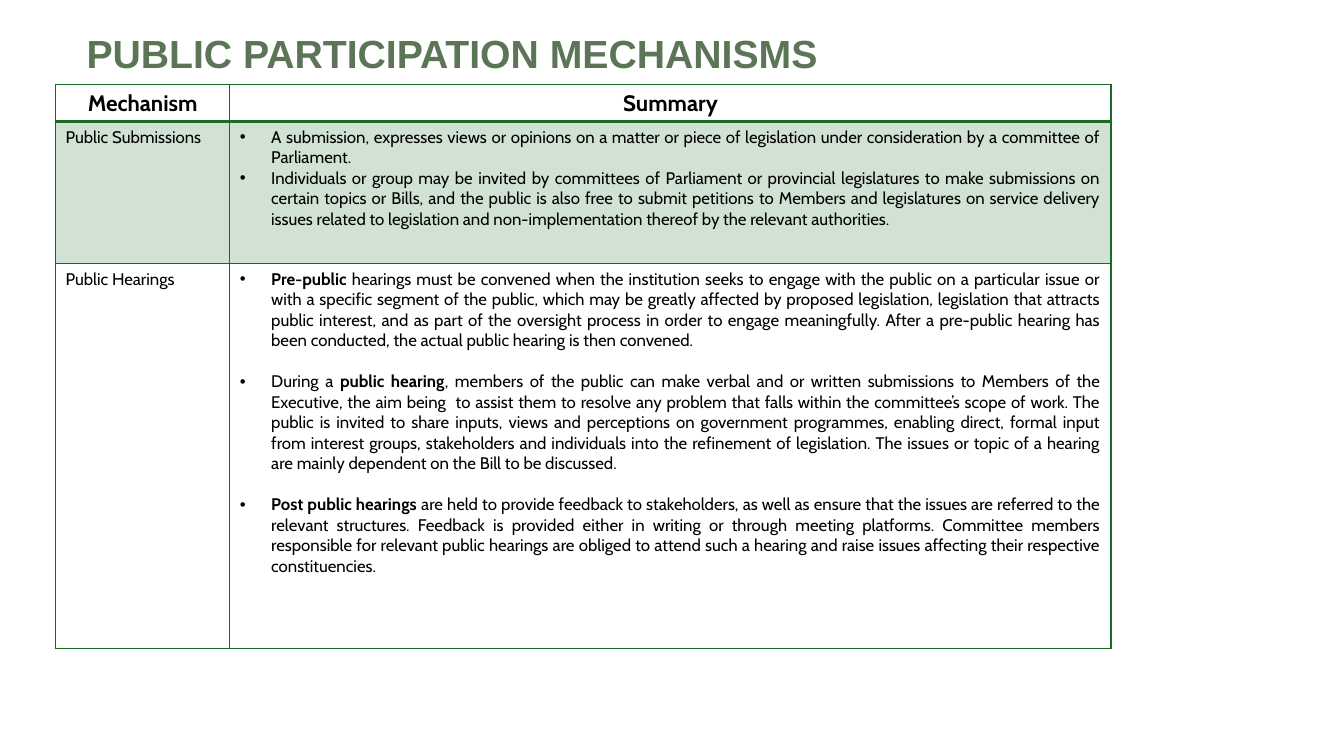
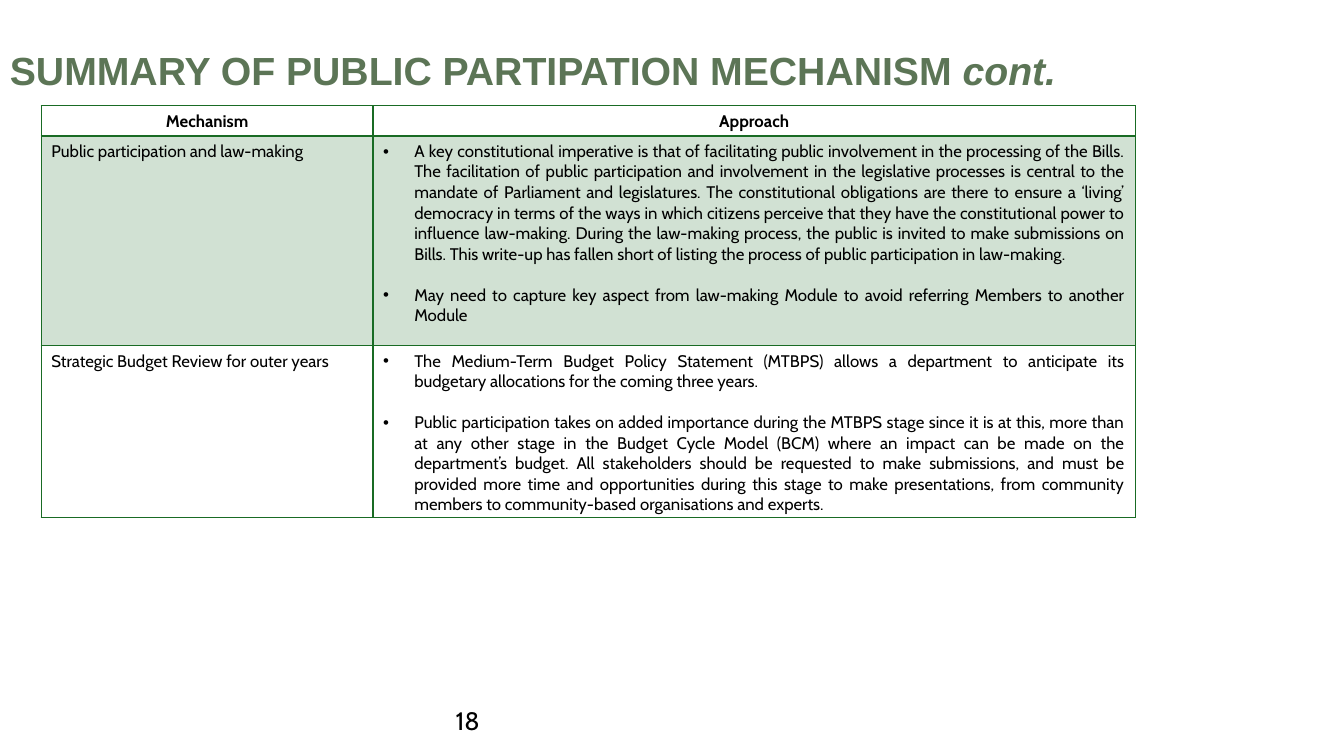
from pptx import Presentation
from pptx.dml.color import RGBColor
from pptx.enum.text import MSO_ANCHOR as Anchor, PP_ALIGN as Align
from pptx.oxml.ns import qn
from pptx.util import Pt
from lxml.etree import SubElement as Sub

# Shared look
PX = 9144  # 100 px to the inch
GREEN, SAGE, BLACK = "196B24", "5C7556", "000000"
HEAD, BODY = "Arial", "Cabin"
TINT = 20  # percent of green in a shaded row
STEP = 31  # hanging indent of a bullet
GAP = 14.6  # one blank line of body text, in points


def color(code):
    return RGBColor.from_string(code)


def add_run(par, text, size, font=BODY, hue=BLACK, bold=False, slant=False):
    run = par.add_run()
    run.text = text
    face = run.font
    face.name, face.size = font, Pt(size)
    face.bold, face.italic = bold, slant
    face.color.rgb = color(hue)


def add_box(slide, left, top, width, height, anchor=Anchor.TOP):
    box = slide.shapes.add_textbox(*(n * PX for n in (left, top, width, height)))
    frame = box.text_frame
    frame.word_wrap = True
    frame.vertical_anchor = anchor
    return frame.paragraphs[0]


def add_title(slide, place, text, tail=""):
    par = add_box(slide, *place, anchor=Anchor.MIDDLE)
    par.line_spacing = 0.9
    add_run(par, text, 28, HEAD, SAGE, bold=True)
    if tail:
        add_run(par, tail, 28, HEAD, SAGE, bold=True, slant=True)


def add_fill(node, code, alpha=100):
    tone = Sub(Sub(node, qn("a:solidFill")), qn("a:srgbClr"), val=code)
    if alpha < 100:
        Sub(tone, qn("a:alpha"), val=str(alpha * 1000))


def style_cell(cell, base, shade):
    # Borders come before the fill
    props = cell._tc.get_or_add_tcPr()
    for side, wide in zip("LRTB", (1, 1, 1, base)):
        line = Sub(props, qn("a:ln" + side), w=str(Pt(wide)))
        add_fill(line, GREEN)
    if shade:
        add_fill(props, GREEN, TINT)
    else:
        cell.fill.background()


def add_bullet(par):
    props = par._p.get_or_add_pPr()
    props.set("marL", str(STEP * PX))
    props.set("indent", str(-STEP * PX))
    Sub(props, qn("a:buFont"), typeface=HEAD)
    Sub(props, qn("a:buChar"), char="•")


def fill_list(cell, items, gap):
    # Text between asterisks is bold
    frame = cell.text_frame
    for i, item in enumerate(items):
        par = frame.add_paragraph() if i else frame.paragraphs[0]
        add_bullet(par)
        par.alignment = Align.JUSTIFY
        if i and gap:
            par.space_before = Pt(gap)
        for k, part in enumerate(item.split("*")):
            if part:
                add_run(par, part, 12, bold=k % 2 == 1)


def add_grid(slide, left, top, cols, rows, heads, size, body):
    shape = slide.shapes.add_table(
        len(rows), len(cols), left * PX, top * PX, sum(cols) * PX, sum(rows) * PX)
    table = shape.table
    table.first_row = table.horz_banding = False
    for col, width in zip(table.columns, cols):
        col.width = width * PX
    for row, height in zip(table.rows, rows):
        row.height = height * PX

    # Header row
    for cell, head in zip(table.rows[0].cells, heads):
        style_cell(cell, 2, False)
        par = cell.text_frame.paragraphs[0]
        par.alignment = Align.CENTER
        add_run(par, head, size, bold=True)

    # Body rows, every other one shaded
    for i, (label, items, gap) in enumerate(body, 1):
        name, text = table.rows[i].cells
        for cell in (name, text):
            style_cell(cell, 1, i % 2 == 1)
        add_run(name.text_frame.paragraphs[0], label, 12)
        fill_list(text, items, gap)


FORMS = [
    ("Public Submissions", [
        "A submission, expresses views or opinions on a matter or piece of "
        "legislation under consideration by a committee of Parliament.",
        "Individuals or group may be invited by committees of Parliament or "
        "provincial legislatures to make submissions on certain topics or Bills, "
        "and the public is also free to submit petitions to Members and "
        "legislatures on service delivery issues related to legislation and "
        "non-implementation thereof by the relevant authorities.",
    ], 0),
    ("Public Hearings", [
        "*Pre-public *hearings must be convened when the institution seeks to "
        "engage with the public on a particular issue or with a specific segment "
        "of the public, which may be greatly affected by proposed legislation, "
        "legislation that attracts public interest, and as part of the oversight "
        "process in order to engage meaningfully. After a pre-public hearing has "
        "been conducted, the actual public hearing is then convened.",
        "During a *public hearing*, members of the public can make verbal and or "
        "written submissions to Members of the Executive, the aim being  to assist "
        "them to resolve any problem that falls within the committee’s scope of "
        "work. The public is invited to share inputs, views and perceptions on "
        "government programmes, enabling direct, formal input from interest "
        "groups, stakeholders and individuals into the refinement of legislation. "
        "The issues or topic of a hearing are mainly dependent on the Bill to be "
        "discussed.",
        "*Post public hearings *are held to provide feedback to stakeholders, as "
        "well as ensure that the issues are referred to the relevant structures. "
        "Feedback is provided either in writing or through meeting platforms. "
        "Committee members responsible for relevant public hearings are obliged to "
        "attend such a hearing and raise issues affecting their respective "
        "constituencies.",
    ], GAP),
]

STAGES = [
    ("Public participation and law-making", [
        "A key constitutional imperative is that of facilitating public "
        "involvement in the processing of the Bills. The facilitation of public "
        "participation and involvement in the legislative processes is central to "
        "the mandate of Parliament and legislatures. The constitutional "
        "obligations are there to ensure a ‘living’ democracy in terms of the ways "
        "in which citizens perceive that they have the constitutional power to "
        "influence law-making. During the law-making process, the public is "
        "invited to make submissions on Bills. This write-up has fallen short of "
        "listing the process of public participation in law-making.",
        "May need to capture key aspect from law-making Module to avoid referring "
        "Members to another Module",
    ], GAP),
    ("Strategic Budget Review for outer years", [
        "The Medium-Term Budget Policy Statement (MTBPS) allows a department to "
        "anticipate its budgetary allocations for the coming three years.",
        "Public participation takes on added importance during the MTBPS stage "
        "since it is at this, more than at any other stage in the Budget Cycle "
        "Model (BCM) where an impact can be made on the department’s budget. All "
        "stakeholders should be requested to make submissions, and must be "
        "provided more time and opportunities during this stage to make "
        "presentations, from community members to community-based organisations "
        "and experts.",
    ], GAP),
]


def main():
    deck = Presentation()
    deck.slide_width, deck.slide_height = 1333 * PX, 750 * PX
    blank = deck.slide_layouts[6]

    # Mechanisms
    slide = deck.slides.add_slide(blank)
    add_title(slide, (76, 19, 1169, 73), "PUBLIC PARTICIPATION MECHANISMS")
    add_grid(slide, 55, 84, (173, 874), (35, 141, 382),
             ("Mechanism", "Summary"), 16, FORMS)

    # Mechanisms, continued
    slide = deck.slides.add_slide(blank)
    add_title(slide, (0, 30, 1333, 84),
              "SUMMARY OF PUBLIC PARTIPATION MECHANISM ", "cont.")
    add_run(add_box(slide, 442, 695, 450, 40), "18", 18)
    add_grid(slide, 41, 105, (329, 756), (30, 208, 169),
             ("Mechanism", "Approach"), 12, STAGES)

    deck.save("out.pptx")


if __name__ == "__main__":
    main()
